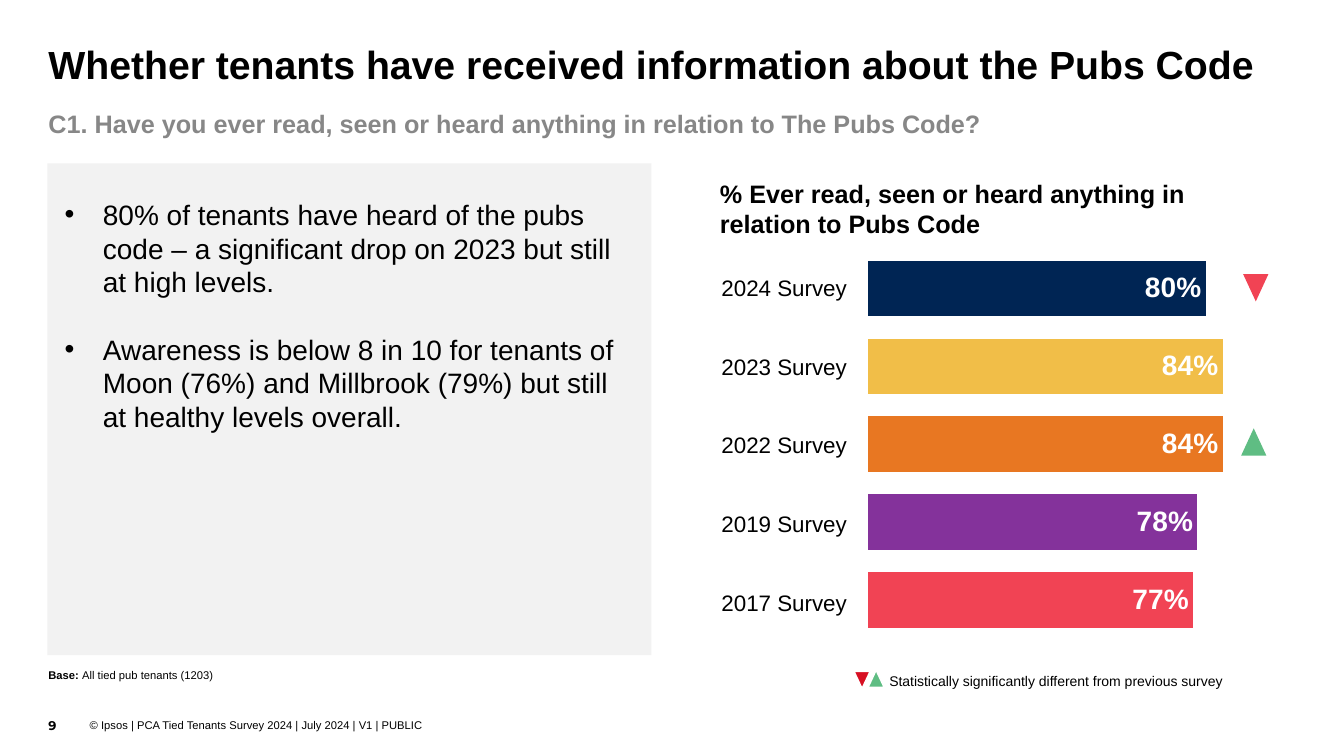
import pptx
import pptx.chart.data
import pptx.dml.color
import pptx.enum.chart
import pptx.enum.shapes
import pptx.enum.text
import pptx.oxml
import pptx.oxml.ns
import pptx.util

Inches = pptx.util.Inches
Pt = pptx.util.Pt
ALIGN = pptx.enum.text.PP_ALIGN
ANCHOR = pptx.enum.text.MSO_ANCHOR
SHAPES = pptx.enum.shapes.MSO_SHAPE


def color(hex_value):
    return pptx.dml.color.RGBColor.from_string(hex_value)


def write_text(text, box=None, at=(0, 0, 1, 1), size=10, bold=False, lead="",
               fill="000000", font="Arial", align=ALIGN.LEFT, anchor=ANCHOR.TOP,
               spacing=1.0, after=0, bullet=False):
    """Write one paragraph per line of text in a placeholder or a new text box; lead is a bold opening."""
    left, top, width, height = (Inches(value) for value in at)
    if box is None:
        box = slide.shapes.add_textbox(left, top, width, height)
    box.left, box.top, box.width, box.height = left, top, width, height
    frame = box.text_frame
    frame.auto_size = pptx.enum.text.MSO_AUTO_SIZE.NONE
    frame.word_wrap = True
    frame.vertical_anchor = anchor
    frame.margin_left = frame.margin_top = frame.margin_right = frame.margin_bottom = 0
    for index, line in enumerate(text.split("\n")):
        paragraph = frame.paragraphs[0] if index == 0 else frame.add_paragraph()
        paragraph.alignment = align
        paragraph.line_spacing = spacing
        paragraph.space_before = Pt(0)
        paragraph.space_after = Pt(after)
        if bullet:
            properties = paragraph._p.get_or_add_pPr()
            properties.set("marL", str(Inches(0.38)))
            properties.set("indent", str(-Inches(0.38)))
            properties.append(pptx.oxml.parse_xml(
                f'<a:buChar {pptx.oxml.ns.nsdecls("a")} char="•"/>'))
        for words, is_bold in ((lead, True), (line, bold)):
            if words:
                run = paragraph.add_run()
                run.text = words
                run.font.name = font
                run.font.size = Pt(size)
                run.font.bold = is_bold
                run.font.color.rgb = color(fill)


presentation = pptx.Presentation()
presentation.slide_width = Inches(13.33)
presentation.slide_height = Inches(7.5)
slide = presentation.slides.add_slide(presentation.slide_layouts[1])

# Grey panel, placed behind the placeholders
panel = slide.shapes.add_shape(SHAPES.RECTANGLE, Inches(0.47), Inches(1.62), Inches(5.99), Inches(4.88))
panel.shadow.inherit = False
panel.fill.solid()
panel.fill.fore_color.rgb = color("F2F2F2")
panel.line.fill.background()
slide.shapes.title._element.addprevious(panel._element)

# Headings, findings and footer
write_text("Whether tenants have received information about the Pubs Code",
           box=slide.shapes.title, at=(0.48, 0.45, 12.33, 0.55), size=28, bold=True, spacing=0.9)
write_text("C1. Have you ever read, seen or heard anything in relation to The Pubs Code?",
           at=(0.48, 1.04, 12.11, 0.31), size=18, bold=True, fill="878787", spacing=1.1)
write_text("80% of tenants have heard of the pubs code – a significant drop on 2023 "
           "but still at high levels.\n"
           "Awareness is below 8 in 10 for tenants of Moon (76%) and Millbrook (79%) "
           "but still at healthy levels overall.",
           box=slide.placeholders[1], at=(0.64, 1.96, 5.54, 2.36), size=20, after=24, bullet=True)
write_text("% Ever read, seen or heard anything in relation to Pubs Code",
           at=(7.14, 1.77, 5.43, 0.61), size=18, bold=True)
write_text("All tied pub tenants (1203)", lead="Base: ", at=(0.48, 6.62, 7.8, 0.2), size=8, spacing=1.1)
write_text("9", at=(0.48, 6.87, 0.33, 0.4), size=9, bold=True, font="Montserrat", anchor=ANCHOR.BOTTOM)
write_text("© Ipsos | PCA Tied Tenants Survey 2024 | July 2024 | V1 | PUBLIC",
           at=(0.89, 7.13, 3.6, 0.13), size=8, anchor=ANCHOR.MIDDLE)

# Awareness by survey: one series per bar
surveys = [
    ("2024 Survey", 0.80, "002554"),
    ("2023 Survey", 0.84, "F1BE48"),
    ("2022 Survey", 0.84, "E87722"),
    ("2019 Survey", 0.78, "84329B"),
    ("2017 Survey", 0.77, "F14354"),
]
chart_data = pptx.chart.data.CategoryChartData(number_format="0%")
chart_data.categories = ["1"]
for name, share, bar_color in surveys:
    chart_data.add_series(name, [share])
chart = slide.shapes.add_chart(pptx.enum.chart.XL_CHART_TYPE.BAR_CLUSTERED, Inches(6.85), Inches(2.26),
                               Inches(6.38), Inches(4.3), chart_data).chart
chart.has_title = False
chart.has_legend = False
chart.font.name = "Arial"
chart.font.size = Pt(10)
chart.font.color.rgb = color("000000")
chart.category_axis.reverse_order = True
chart.category_axis.visible = False
chart.value_axis.minimum_scale = 0
chart.value_axis.maximum_scale = 1
chart.value_axis.has_major_gridlines = False
chart.value_axis.visible = False

plot = chart.plots[0]
plot.gap_width = 70
plot.overlap = -40
plot.vary_by_categories = False
for series, (name, share, bar_color) in zip(plot.series, surveys):
    series.format.fill.solid()
    series.format.fill.fore_color.rgb = color(bar_color)
    labels = series.data_labels
    labels.show_value = True
    labels.number_format = "0%"
    labels.number_format_is_linked = False
    labels.position = pptx.enum.chart.XL_LABEL_POSITION.INSIDE_END
    labels.font.name = "Arial"
    labels.font.size = Pt(20)
    labels.font.bold = True
    labels.font.color.rgb = color("FFFFFF")

plot_area = chart._chartSpace.chart.plotArea
for old_layout in plot_area.findall(pptx.oxml.ns.qn("c:layout")):
    plot_area.remove(old_layout)
plot_area.insert(0, pptx.oxml.parse_xml(
    f'<c:layout {pptx.oxml.ns.nsdecls("c")}><c:manualLayout><c:layoutTarget val="inner"/>'
    '<c:xMode val="edge"/><c:yMode val="edge"/><c:x val="0.276"/><c:y val="0.031"/>'
    '<c:w val="0.656"/><c:h val="0.937"/></c:manualLayout></c:layout>'))

for index, (name, share, bar_color) in enumerate(surveys):
    write_text(name, at=(6.93, 2.72 + 0.78 * index, 1.47, 0.27), size=16, align=ALIGN.RIGHT)

# Significance markers beside the bars and in the key
for left, top, width, height, rotation, fill, outline in [
    (12.33, 2.72, 0.25, 0.27, 180, "F14354", None),
    (12.31, 4.25, 0.25, 0.27, 0, "5FBD83", None),
    (8.47, 6.66, 0.16, 0.17, 180, "D71023", "FFFFFF"),
    (8.61, 6.65, 0.16, 0.17, 0, "5FBD83", "FFFFFF"),
]:
    marker = slide.shapes.add_shape(SHAPES.ISOSCELES_TRIANGLE, Inches(left), Inches(top),
                                    Inches(width), Inches(height))
    marker.shadow.inherit = False
    marker.rotation = rotation
    marker.fill.solid()
    marker.fill.fore_color.rgb = color(fill)
    if outline:
        marker.line.color.rgb = color(outline)
        marker.line.width = Pt(1)
    else:
        marker.line.fill.background()
write_text("Statistically significantly different from previous survey",
           at=(8.82, 6.66, 3.77, 0.17), size=10, spacing=1.1)

presentation.save("out.pptx")
